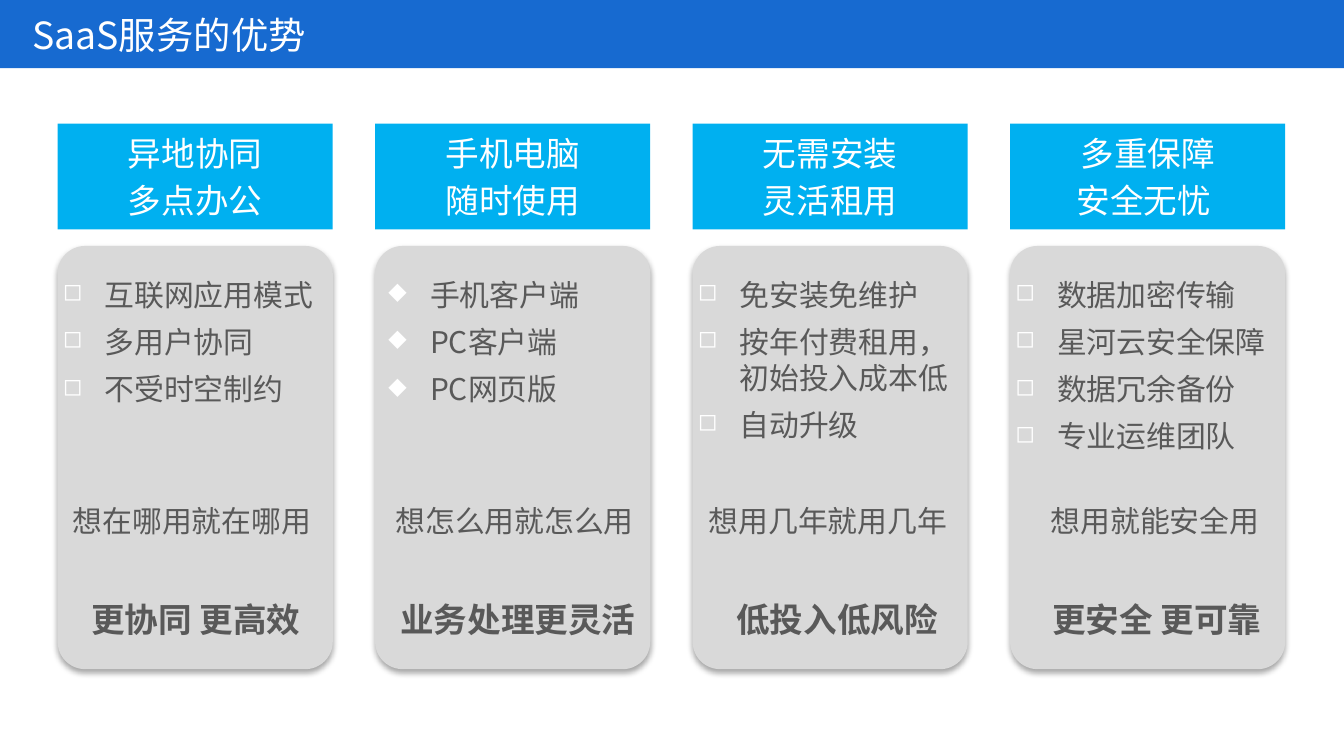
from lxml.etree import SubElement
from pptx import Presentation
from pptx.dml.color import RGBColor
from pptx.enum.shapes import MSO_SHAPE
from pptx.enum.text import MSO_ANCHOR, MSO_AUTO_SIZE, PP_ALIGN
from pptx.oxml.ns import qn
from pptx.util import Cm, Pt

FONT = "Noto Sans CJK SC"
BLUE = RGBColor(0x17, 0x6A, 0xD0)
SKY = RGBColor(0x00, 0xB0, 0xF0)
PALE = RGBColor(0xD9, 0xD9, 0xD9)
GREY = RGBColor(0x59, 0x59, 0x59)
WHITE = RGBColor(0xFF, 0xFF, 0xFF)

COLUMNS = [
    (["异地协同", "多点办公"], "◻", 0.1, 6.12,
     ["互联网应用模式", "多用户协同", "不受时空制约"],
     ("想在哪用就在哪用", 3.63, 5.08), ("更协同 更高效", 3.7, 4.55)),
    (["手机电脑", "随时使用"], "◆", 0.25, 6.12,
     ["手机客户端", "PC客户端", "PC网页版"],
     ("想怎么用就怎么用", 9.73, 5.08), ("业务处理更灵活", 9.79, 5)),
    (["无需安装", "灵活租用"], "◻", 0.1, 5.21,
     ["免安装免维护", "按年付费租用，初始投入成本低", "自动升级"],
     ("想用几年就用几年", 15.65, 5.08), ("低投入低风险", 15.82, 4.37)),
    (["多重保障", "安全无忧 "], "◻", 0.1, 5.44,
     ["数据加密传输", "星河云安全保障", "数据冗余备份", "专业运维团队"],
     ("想用就能安全用", 21.83, 4.5), ("更安全 更可靠", 21.86, 4.55)),
]


def add_block(kind, left, top, width, height, fill):
    block = slide.shapes.add_shape(kind, Cm(left), Cm(top), Cm(width), Cm(height))
    block.shadow.inherit = False
    block.fill.solid()
    block.fill.fore_color.rgb = fill
    block.line.fill.background()
    return block


def write(frame, lines, size, color, align=PP_ALIGN.LEFT, gap=0, bold=False):
    frame.text = "\n".join(lines)
    for i, para in enumerate(frame.paragraphs):
        para.alignment = align
        if i:
            para.space_before = Pt(gap)
        for run in para.runs:
            run.font.size = Pt(size)
            run.font.bold = bold
            run.font.color.rgb = color
            run.font.name = FONT
            latin = run.font._element.find(qn("a:latin"))
            east = SubElement(run.font._element, qn("a:ea"), typeface=FONT)
            latin.addnext(east)


deck = Presentation()
deck.slide_width, deck.slide_height = Cm(25.4), Cm(14.29)
slide = deck.slides.add_slide(deck.slide_layouts[6])

add_block(MSO_SHAPE.RECTANGLE, 0, -0.03, 25.4, 1.32, BLUE)
title = slide.shapes.add_textbox(Cm(0.36), Cm(-0.03), Cm(19.81), Cm(1.35)).text_frame
title.word_wrap = True
title.vertical_anchor = MSO_ANCHOR.MIDDLE
write(title, ["SaaS服务的优势"], 20, WHITE)

for col, (head, mark, inset, tall, items, note, gain) in enumerate(COLUMNS):
    left = 1.09 + 6 * col
    banner = add_block(MSO_SHAPE.RECTANGLE, left, 2.34, 5.2, 2, SKY).text_frame
    banner.vertical_anchor = MSO_ANCHOR.MIDDLE
    write(banner, head, 18, WHITE, PP_ALIGN.CENTER, 3.6)

    card = add_block(MSO_SHAPE.ROUNDED_RECTANGLE, left, 4.65, 5.2, 8, PALE)
    card.adjustments[0] = 0.1
    glow = card._element.spPr.find(qn("a:effectLst"))
    shade = SubElement(glow, qn("a:outerShdw"), blurRad=str(Pt(3.1)),
                       dist=str(Pt(1.8)), dir="5400000", algn="t", rotWithShape="0")
    tint = SubElement(shade, qn("a:srgbClr"), val="000000")
    SubElement(tint, qn("a:alpha"), val="35000")

    points = slide.shapes.add_textbox(Cm(left), Cm(5.1), Cm(5.2), Cm(tall)).text_frame
    points.word_wrap = True
    points.auto_size = MSO_AUTO_SIZE.SHAPE_TO_FIT_TEXT
    points.margin_left = points.margin_right = Cm(inset)
    write(points, items, 16, GREY, gap=6)
    for para in points.paragraphs:
        props = para._p.get_or_add_pPr()
        props.set("marL", str(Cm(0.79)))
        props.set("indent", str(Cm(-0.79)))
        hue = SubElement(props, qn("a:buClr"))
        SubElement(hue, qn("a:srgbClr"), val=str(WHITE))
        SubElement(props, qn("a:buSzPct"), val="80000")
        SubElement(props, qn("a:buChar"), char=mark)

    for (text, mid, width), top, height, size, bold in [
        (note, 9.37, 0.94, 16, False),
        (gain, 11.2, 1.02, 18, True),
    ]:
        box = slide.shapes.add_textbox(Cm(mid - width / 2), Cm(top), Cm(width), Cm(height))
        frame = box.text_frame
        frame.word_wrap = False
        frame.auto_size = MSO_AUTO_SIZE.SHAPE_TO_FIT_TEXT
        write(frame, [text], size, GREY, PP_ALIGN.CENTER, bold=bold)

deck.save("out.pptx")
